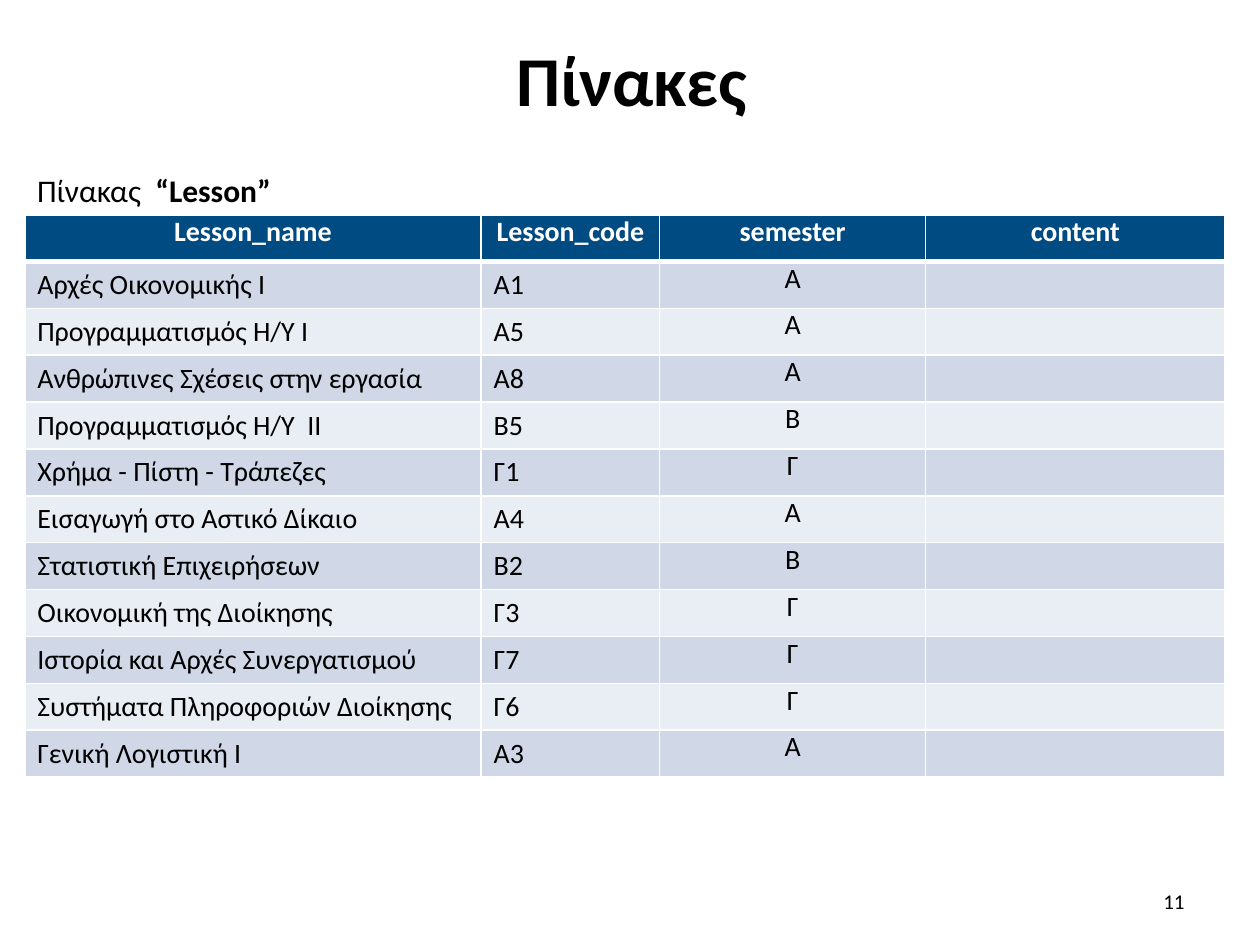
import pptx
import pptx.dml.color
import pptx.enum.text
import pptx.oxml
import pptx.oxml.ns
import pptx.util
from lxml import etree

Cm = pptx.util.Cm
Pt = pptx.util.Pt
qn = pptx.oxml.ns.qn
ALIGN = pptx.enum.text.PP_ALIGN
ANCHOR = pptx.enum.text.MSO_ANCHOR
rgb = pptx.dml.color.RGBColor.from_string


def write(frame, text, size=16, color="000000", bold=False, align=ALIGN.LEFT):
    """Append a formatted run to the first paragraph of a text frame."""
    paragraph = frame.paragraphs[0]
    paragraph.alignment = align
    run = paragraph.add_run()
    run.text = text
    run.font.name = "Calibri"
    run.font.size = Pt(size)
    run.font.bold = bold
    run.font.color.rgb = rgb(color)


def draw_border(cell, side, width):
    line = etree.SubElement(cell._tc.get_or_add_tcPr(), qn(f"a:ln{side}"), w=str(Pt(width)))
    fill = etree.SubElement(line, qn("a:solidFill"))
    etree.SubElement(fill, qn("a:srgbClr"), val="FFFFFF")


presentation = pptx.Presentation()
presentation.slide_width = Cm(25.4)
presentation.slide_height = Cm(19.05)
slide = presentation.slides.add_slide(presentation.slide_layouts[5])

# Title
title = slide.shapes.title
title.left, title.top, title.width, title.height = Cm(1.3), Cm(0.33), Cm(22.86), Cm(2.51)
title.text_frame.vertical_anchor = ANCHOR.MIDDLE
write(title.text_frame, "Πίνακες", size=40, bold=True, align=ALIGN.CENTER)

# Lesson table
header = ["Lesson_name", "Lesson_code", "semester", "content"]
lessons = [
    ("Αρχές Οικονομικής Ι", "Α1", "Α", ""),
    ("Προγραμματισμός Η/Υ Ι", "Α5", "Α", ""),
    ("Ανθρώπινες Σχέσεις στην εργασία", "Α8", "Α", ""),
    ("Προγραμματισμός Η/Υ  ΙΙ", "Β5", "Β", ""),
    ("Χρήμα - Πίστη - Τράπεζες", "Γ1", "Γ", ""),
    ("Εισαγωγή στο Αστικό Δίκαιο", "Α4", "Α", ""),
    ("Στατιστική Επιχειρήσεων", "Β2", "Β", ""),
    ("Οικονομική της Διοίκησης", "Γ3", "Γ", ""),
    ("Ιστορία και Αρχές Συνεργατισμού", "Γ7", "Γ", ""),
    ("Συστήματα Πληροφοριών Διοίκησης", "Γ6", "Γ", ""),
    ("Γενική Λογιστική Ι", "Α3", "Α", ""),
]
rows = [header, *lessons]
lesson_table = slide.shapes.add_table(
    len(rows), len(header), Cm(0.5), Cm(4.33), Cm(24.2), Cm(0.94 * len(rows))
).table
for column, width in zip(lesson_table.columns, [9.2, 3.6, 5.36, 6.04]):
    column.width = Cm(width)

for r, values in enumerate(rows):
    lesson_table.rows[r].height = Cm(0.94)
    is_header = r == 0
    for c, value in enumerate(values):
        cell = lesson_table.cell(r, c)
        is_centred = is_header or c == 2
        if is_centred:
            cell.margin_left = cell.margin_right = Cm(0.18)
            cell.margin_top = cell.margin_bottom = 0

        # Thick rule under the header, thin rules elsewhere
        for side in "LRTB":
            under_header = (r, side) in [(0, "B"), (1, "T")]
            draw_border(cell, side, 3 if under_header else 1)
        cell.fill.solid()
        cell.fill.fore_color.rgb = rgb("004B82" if is_header else ("E9EDF4", "D0D8E8")[r % 2])

        if value:
            write(cell.text_frame, value, bold=is_header,
                  color="FFFFFF" if is_header else "000000",
                  align=ALIGN.CENTER if is_centred else ALIGN.LEFT)
        else:
            # Keeps empty cells from stretching the row
            etree.SubElement(cell.text_frame.paragraphs[0]._p, qn("a:endParaRPr"), sz="1600")

# Table caption
caption = slide.shapes.add_textbox(Cm(0.5), Cm(3.33), Cm(5.28), Cm(1.02)).text_frame
caption.word_wrap = False
write(caption, "Πίνακας  ", size=18)
write(caption, "“Lesson”", size=18, bold=True)

# Slide number
slide_number = slide.shapes.add_textbox(Cm(18.2), Cm(17.65), Cm(5.93), Cm(1.02)).text_frame
slide_number.word_wrap = True
slide_number.vertical_anchor = ANCHOR.MIDDLE
write(slide_number, "11", size=12, align=ALIGN.RIGHT)

presentation.save("out.pptx")
